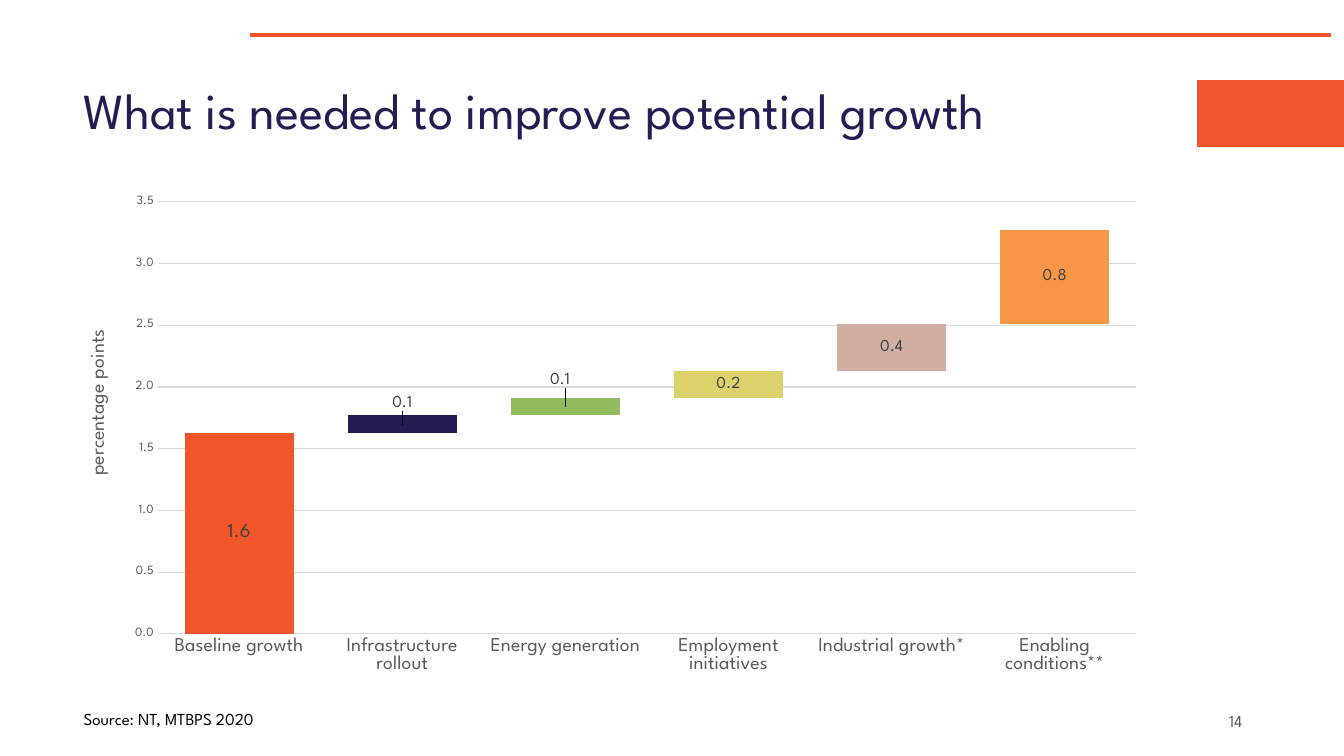
from lxml import etree
from pptx import Presentation
from pptx.chart.data import CategoryChartData
from pptx.dml.color import RGBColor
from pptx.enum.chart import XL_CHART_TYPE, XL_LABEL_POSITION, XL_TICK_MARK
from pptx.enum.shapes import MSO_CONNECTOR, MSO_SHAPE
from pptx.enum.text import MSO_ANCHOR, PP_ALIGN
from pptx.oxml.ns import qn
from pptx.util import Inches, Pt

STACKED = XL_CHART_TYPE.COLUMN_STACKED
CENTER = XL_LABEL_POSITION.CENTER
NO_TICK = XL_TICK_MARK.NONE
STRAIGHT = MSO_CONNECTOR.STRAIGHT
RECTANGLE = MSO_SHAPE.RECTANGLE
TOP, MIDDLE = MSO_ANCHOR.TOP, MSO_ANCHOR.MIDDLE
LEFT, RIGHT = PP_ALIGN.LEFT, PP_ALIGN.RIGHT

FONT = "League Spartan"
ORANGE, NAVY, GREY, PALE = "F0552B", "221E53", "595959", "D9D9D9"

# category, growth contribution, colour, label size, label shift (share of chart)
STEPS = [
    ("Baseline growth", 1.63, "F0562A", 14, None),
    ("Infrastructure rollout", 0.14, NAVY, 12, (0, -0.04)),
    ("Energy generation", 0.14, "91BC5E", 12, (-0.005, -0.05)),
    ("Employment initiatives", 0.22, "DDD16B", 12, None),
    ("Industrial growth*", 0.38, "D0AFA2", 12, None),
    ("Enabling conditions**", 0.76, "F79646", 12, None),
]


def color(value):
    return RGBColor.from_string(value)


def style_font(font, size, hex_color):
    for name, value in {"name": FONT, "size": Pt(size), "bold": False}.items():
        setattr(font, name, value)
    font.color.rgb = color(hex_color)


def style_line(line, hex_color, width):
    line.color.rgb = color(hex_color)
    line.width = Pt(width)


def add_text(page, area, text, size, hex_color, anchor=TOP, align=LEFT, spacing=1.0):
    box = page.shapes.add_textbox(*map(Inches, area))
    frame = box.text_frame
    frame.word_wrap = True
    frame.vertical_anchor = anchor
    para = frame.paragraphs[0]
    para.alignment = align
    para.line_spacing = spacing
    span = para.add_run()
    span.text = text
    style_font(span.font, size, hex_color)


def add_rule(page, left, right, top):
    rule = page.shapes.add_connector(
        STRAIGHT, Inches(left), Inches(top), Inches(right), Inches(top))
    style_line(rule.line, ORANGE, 3)
    etree.SubElement(rule._element.spPr, qn("a:effectLst"))


def add_block(page, area):
    block = page.shapes.add_shape(RECTANGLE, *map(Inches, area))
    block.shadow.inherit = False
    block.fill.solid()
    block.fill.fore_color.rgb = color(ORANGE)
    style_line(block.line, ORANGE, 0.75)


def place(parent, index, values):
    """Give a chart part a manual layout, as its child number index."""
    for old in parent.findall(qn("c:layout")):
        parent.remove(old)
    layout = etree.Element(qn("c:layout"))
    manual = etree.SubElement(layout, qn("c:manualLayout"))
    for name, value in values.items():
        etree.SubElement(manual, qn(f"c:{name}")).set("val", str(value))
    parent.insert(index, layout)


def style_axes(chart):
    category = chart.category_axis
    category.major_tick_mark = NO_TICK
    style_font(category.tick_labels.font, 14, GREY)
    style_line(category.format.line, PALE, 0.75)

    axis = chart.value_axis
    settings = {"minimum_scale": 0, "maximum_scale": 3.5, "major_unit": 0.5,
                "major_tick_mark": NO_TICK, "has_major_gridlines": True}
    for name, value in settings.items():
        setattr(axis, name, value)
    axis.tick_labels.number_format = "0.0"
    axis.tick_labels.number_format_is_linked = False
    style_font(axis.tick_labels.font, 9, GREY)
    axis.format.line.fill.background()
    style_line(axis.major_gridlines.format.line, PALE, 0.75)

    frame = axis.axis_title.text_frame
    span = frame.paragraphs[0].add_run()
    span.text = "percentage points"
    style_font(span.font, 14, GREY)
    title = axis.axis_title._element
    body = title.find(".//" + qn("a:bodyPr"))
    body.set("rot", "-5400000")
    body.set("vert", "horz")
    place(title, 1, {"xMode": "edge", "yMode": "edge", "x": 0.01, "y": 0.27})


def style_step(series, index):
    """Show and label one column of the series; hide the ones that only lift."""
    _, _, fill, size, shift = STEPS[index]
    series.format.fill.solid()
    series.format.fill.fore_color.rgb = color(fill)
    for later in range(index + 1, len(STEPS)):
        series.points[later].format.fill.background()
    label = series.points[index].data_label
    style_font(label.font, size, "404040")
    label.position = CENTER
    series.data_labels.show_value = False
    if shift:
        element = series._element.find(".//" + qn("c:dLbl"))
        place(element, 1, dict(zip("xy", shift)))


def add_waterfall(page, area):
    data = CategoryChartData(number_format="0.0")
    data.categories = [step[0] for step in STEPS]
    for index, step in enumerate(STEPS):
        values = [0] * index + [step[1]] * (len(STEPS) - index)
        data.add_series(f"Series {index + 1}", values)
    chart = page.shapes.add_chart(STACKED, *map(Inches, area), data).chart
    chart.has_legend = False
    chart.has_title = False
    style_font(chart.font, 10, "000000")
    plot = chart.plots[0]
    plot.gap_width = 50
    plot.overlap = 100
    style_axes(chart)
    for index, series in enumerate(plot.series):
        style_step(series, index)
    place(chart._chartSpace.chart.plotArea, 0, {
        "layoutTarget": "inner", "xMode": "edge", "yMode": "edge",
        "x": 0.078, "y": 0.03, "w": 0.908, "h": 0.837})


def main():
    deck = Presentation()
    deck.slide_width, deck.slide_height = Inches(13.33), Inches(7.5)
    page = deck.slides.add_slide(deck.slide_layouts[6])
    add_rule(page, 2.48, 13.2, 0.35)
    add_text(page, (0.73, 0.4, 11.5, 1.45),
             "What is needed to improve potential growth", 36, NAVY, MIDDLE, spacing=0.9)
    add_text(page, (9.42, 6.95, 3, 0.4), "14", 12, "58585A", MIDDLE, RIGHT)
    add_block(page, (11.88, 0.8, 1.46, 0.65))
    add_waterfall(page, (0.73, 1.85, 10.69, 5.12))
    add_text(page, (0.73, 6.98, 3.19, 0.3), "Source: NT, MTBPS 2020", 12, "000000")
    deck.save("out.pptx")


if __name__ == "__main__":
    main()
